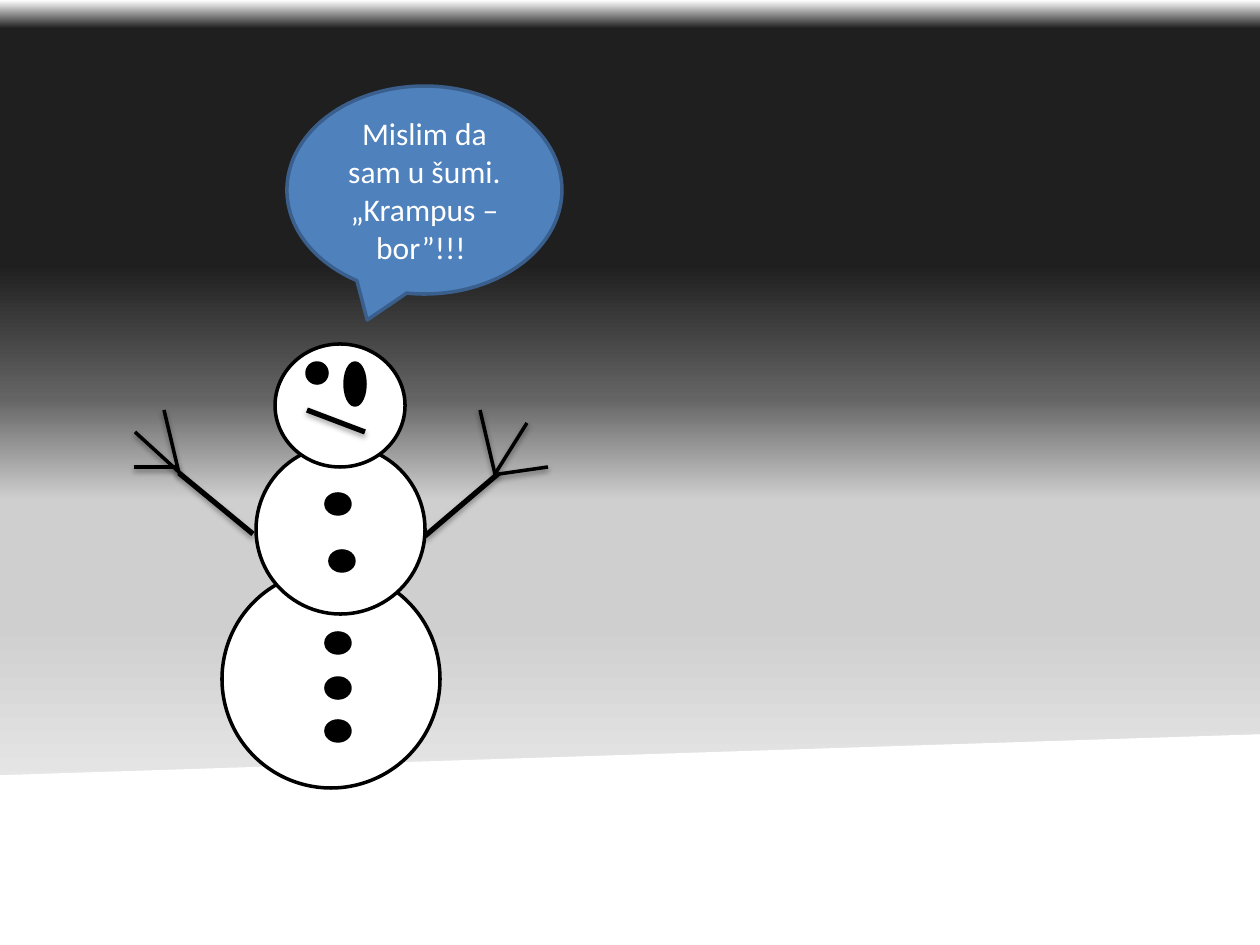
from dataclasses import dataclass

from lxml.etree import SubElement
from pptx import Presentation
from pptx.dml.color import RGBColor
from pptx.enum.shapes import MSO_CONNECTOR as Connector, MSO_SHAPE as Shape
from pptx.enum.text import MSO_ANCHOR as Anchor, PP_ALIGN as Align
from pptx.oxml.ns import qn
from pptx.util import Pt

EMU_PER_PX = 914400 / 126


def px(value):
    return round(value * EMU_PER_PX)


@dataclass(frozen=True)
class Theme:
    snow: str = "FFFFFF"
    coal: str = "000000"
    bubble: str = "4F81BD"
    bubble_edge: str = "3A5F8C"
    sky: tuple = ((0, "FFFFFF"), (3, "1F1F1F"), (28, "1F1F1F"), (42, "636363"),
                  (53, "CFCFCF"), (66, "CFCFCF"), (100, "FFFFFF"))
    font: str = "Calibri"
    text_size: int = 18
    thin: int = 2
    thick: int = 3


class Painter:
    def __init__(self, slide, theme):
        self.slide = slide
        self.theme = theme
        self.shapes = slide.shapes

    def sky(self):
        fill = self.slide.background.fill
        fill.gradient()
        fill.gradient_angle = 270
        stops = self.slide.element.find(".//" + qn("a:gsLst"))
        for old_stop in list(stops):
            stops.remove(old_stop)
        for percent, color in self.theme.sky:
            stop = SubElement(stops, qn("a:gs"), pos=str(percent * 1000))
            SubElement(stop, qn("a:srgbClr"), val=color)

    def start_group(self):
        self.shapes = self.slide.shapes.add_group_shape().shapes

    def end_group(self):
        self.shapes = self.slide.shapes

    def shape(self, kind, box, fill, edge):
        shape = self.shapes.add_shape(kind, *map(px, box))
        shape.shadow.inherit = False
        shape.fill.solid()
        shape.fill.fore_color.rgb = RGBColor.from_string(fill)
        shape.line.color.rgb = RGBColor.from_string(edge)
        shape.line.width = Pt(self.theme.thin)
        return shape

    def snowball(self, *box):
        self.shape(Shape.OVAL, box, self.theme.snow, self.theme.coal)

    def coal(self, *box, kind=Shape.OVAL):
        self.shape(kind, box, self.theme.coal, self.theme.coal)

    def stick(self, start, end, width, opacity):
        line = self.shapes.add_connector(Connector.STRAIGHT, *map(px, start + end))
        line.line.color.rgb = RGBColor.from_string(self.theme.coal)
        line.line.width = Pt(width)
        properties = line._element.spPr
        effects = SubElement(properties, qn("a:effectLst"))
        shadow = SubElement(effects, qn("a:outerShdw"), blurRad="40000",
                            dist="23000" if width == self.theme.thick else "20000",
                            dir="5400000", rotWithShape="0")
        color = SubElement(shadow, qn("a:srgbClr"), val=self.theme.coal)
        SubElement(color, qn("a:alpha"), val=str(opacity * 1000))

    def limb(self, start, end):
        self.stick(start, end, self.theme.thick, 35)

    def finger(self, start, end):
        self.stick(start, end, self.theme.thin, 38)

    def speech(self, text, box):
        bubble = self.shape(Shape.OVAL_CALLOUT, box, self.theme.bubble, self.theme.bubble_edge)
        frame = bubble.text_frame
        frame.word_wrap = True
        frame.vertical_anchor = Anchor.MIDDLE
        paragraph = frame.paragraphs[0]
        paragraph.alignment = Align.CENTER
        run = paragraph.add_run()
        run.text = text
        run.font.name = self.theme.font
        run.font.size = Pt(self.theme.text_size)
        run.font.color.rgb = RGBColor.from_string(self.theme.snow)


def draw_snowman(painter):
    painter.start_group()
    painter.snowball(222, 570, 218, 218)
    painter.snowball(256, 445, 169, 169)
    for left, top in ((326, 721), (326, 678), (326, 633), (330, 551), (326, 494)):
        painter.coal(left, top, 24, 20)

    painter.limb((253, 534), (179, 473))
    painter.limb((425, 536), (499, 473))
    fingers = (
        ((527, 423), (495, 474)),
        ((499, 474), (548, 467)),
        ((480, 410), (495, 474)),
        ((164, 410), (179, 473)),
        ((135, 432), (180, 473)),
        ((134, 467), (179, 467)),
    )
    for start, end in fingers:
        painter.finger(start, end)

    painter.snowball(275, 344, 130, 123)
    for left, height in ((307, 20), (345, 42)):
        painter.coal(left, 363, 20, height, kind=Shape.FLOWCHART_CONNECTOR)
    painter.limb((307, 410), (365, 432))
    painter.end_group()


def main():
    presentation = Presentation()
    presentation.slide_width = px(1260)
    presentation.slide_height = px(945)
    slide = presentation.slides.add_slide(presentation.slide_layouts[6])
    theme = Theme()
    painter = Painter(slide, theme)

    painter.sky()
    painter.shape(Shape.FLOWCHART_MANUAL_INPUT, (0, 736, 1260, 205), theme.snow, theme.snow)
    draw_snowman(painter)
    painter.speech("Mislim da sam u šumi. „Krampus – bor”!!! ", (287, 86, 275, 208))

    presentation.save("out.pptx")


if __name__ == "__main__":
    main()
